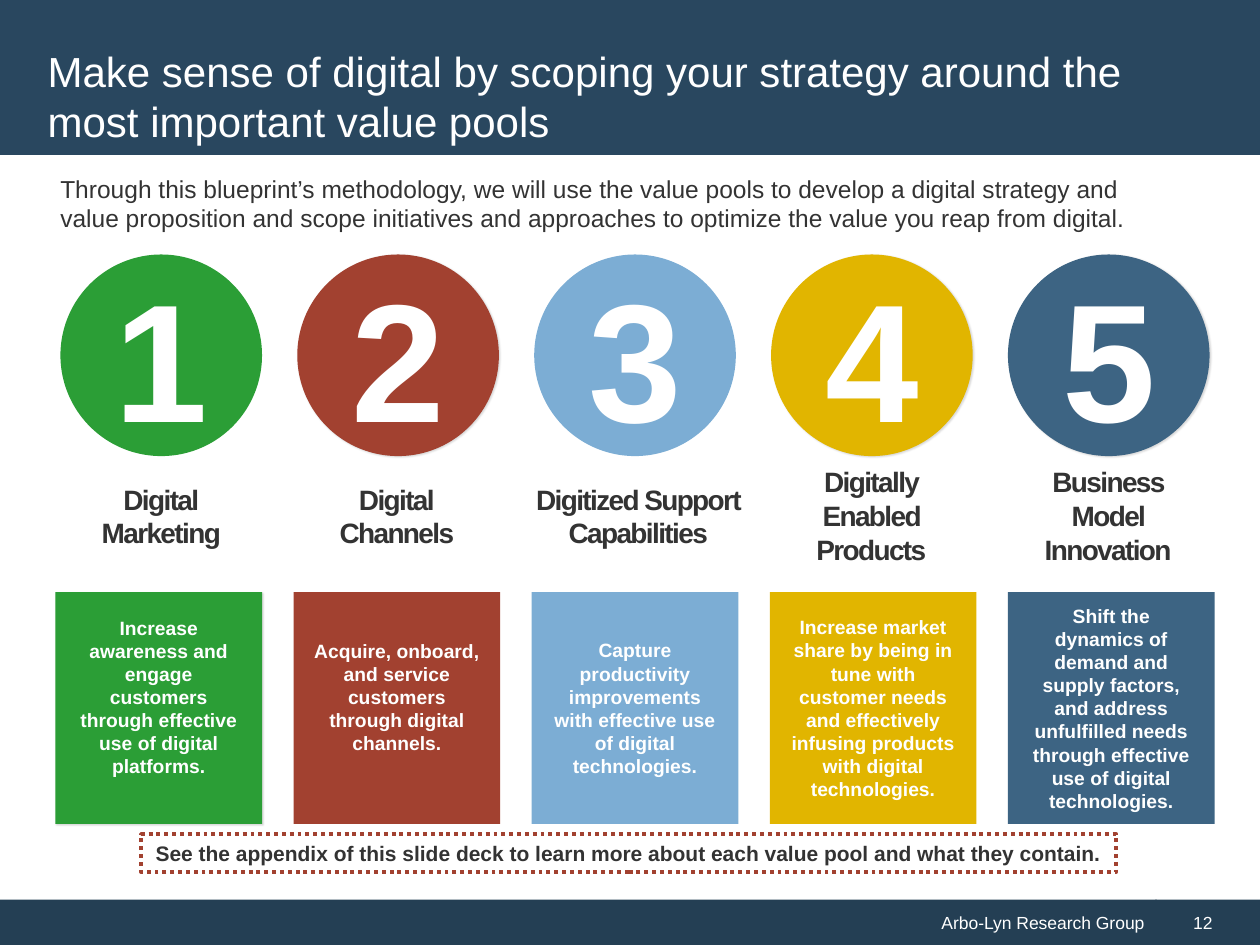
from lxml import etree
from pptx import Presentation
from pptx.dml.color import RGBColor
from pptx.enum.dml import MSO_LINE
from pptx.enum.shapes import MSO_SHAPE
from pptx.enum.text import MSO_ANCHOR, PP_ALIGN
from pptx.oxml.ns import qn
from pptx.util import Pt

PX = 9144
RECT, OVAL = MSO_SHAPE.RECTANGLE, MSO_SHAPE.OVAL
TOP, MIDDLE = MSO_ANCHOR.TOP, MSO_ANCHOR.MIDDLE
LEFT, CENTER, RIGHT = PP_ALIGN.LEFT, PP_ALIGN.CENTER, PP_ALIGN.RIGHT
DOTTED = MSO_LINE.ROUND_DOT
COLORS = {
    "white": "FFFFFF", "text": "333333", "header": "29475F", "footer": "243F54",
    "green": "2B9E36", "red": "A24130", "sky": "7CADD4", "gold": "E1B500",
    "steel": "3D6483",
}
POOLS = [
    {"color": "green", "label": "Digital\nMarketing", "label_box": (67, 378, 122, 64),
     "text": "Increase awareness and engage customers through effective use of "
             "digital platforms.",
     "raise_by": 18, "box_shadow": True},
    {"color": "red", "label": "Digital\nChannels", "label_box": (257, 378, 116, 64),
     "text": "Acquire, onboard, and service customers through digital channels.",
     "raise_by": 18, "circle_shadow": True},
    {"color": "sky", "label": "Digitized Support Capabilities",
     "label_box": (414, 378, 185, 64),
     "text": "Capture productivity improvements with effective use of digital "
             "technologies."},
    {"color": "gold", "label": "Digitally Enabled Products",
     "label_box": (607, 364, 169, 91),
     "text": "Increase market share by being in tune with customer needs and "
             "effectively infusing products with digital technologies.",
     "circle_shadow": True},
    {"color": "steel", "label": "Business Model Innovation",
     "label_box": (798, 364, 163, 91),
     "text": "Shift the dynamics of demand and supply factors, and address "
             "unfulfilled needs through effective use of digital technologies.",
     "circle_shadow": True},
]


def rgb(name):
    return RGBColor.from_string(COLORS[name])


def write(sp, text, size=12, color="white", bold=False, align=CENTER, anchor=MIDDLE,
          insets=(10, 5, 10, 5), spacing=None):
    tf = sp.text_frame
    tf.word_wrap = True
    tf.vertical_anchor = anchor
    tf.margin_left, tf.margin_top, tf.margin_right, tf.margin_bottom = (
        v * PX for v in insets)
    for i, line in enumerate(text.split("\n")):
        p = tf.add_paragraph() if i else tf.paragraphs[0]
        p.alignment = align
        r = p.add_run()
        r.text = line
        r.font.name, r.font.size, r.font.bold = "Arial", Pt(size), bold
        r.font.color.rgb = rgb(color)
        if spacing:
            r._r.get_or_add_rPr().set("spc", str(spacing))


class Deck:
    """Holds the presentation, its style and the current slide."""

    def __init__(self, width, height):
        self.prs = Presentation()
        self.prs.slide_width, self.prs.slide_height = width * PX, height * PX
        self.s = self.prs.slides.add_slide(self.prs.slide_layouts[6])

    def shape(self, kind, box, fill=None, line=None, shadow=False, text="", **fmt):
        sp = self.s.shapes.add_shape(kind, *(v * PX for v in box))
        sp.shadow.inherit = False
        if fill:
            sp.fill.solid()
            sp.fill.fore_color.rgb = rgb(fill)
        else:
            sp.fill.background()
        if line:
            sp.line.color.rgb = rgb(line)
            sp.line.width = Pt(2.25)
            sp.line.dash_style = DOTTED
        else:
            sp.line.fill.background()
        if shadow:
            self.add_shadow(sp)
        if text:
            write(sp, text, **fmt)

    def add_shadow(self, sp):
        effects = sp._element.spPr.find(qn("a:effectLst"))
        outer = etree.SubElement(effects, qn("a:outerShdw"), blurRad="12700",
                                 dist="12700", dir="2700000", algn="tl")
        tint = etree.SubElement(outer, qn("a:srgbClr"), val="000000")
        etree.SubElement(tint, qn("a:alpha"), val="15000")

    def text(self, box, text, **fmt):
        write(self.s.shapes.add_textbox(*(v * PX for v in box)), text, **fmt)


def main():
    deck = Deck(1000, 750)
    deck.shape(RECT, (0, 714, 918, 37), "footer", text="Arbo-Lyn Research Group",
               size=10, align=RIGHT)
    deck.shape(RECT, (917, 714, 83, 37), "footer", text="12", size=10, align=LEFT,
               insets=(30, 5, 10, 5))
    deck.shape(RECT, (0, 0, 1000, 123), "header")
    deck.text((28, 28, 943, 96),
              "Make sense of digital by scoping your strategy around the most "
              "important value pools", size=24, align=LEFT)
    deck.text((38, 133, 888, 57),
              "Through this blueprint’s methodology, we will use the value pools to "
              "develop a digital strategy and value proposition and scope initiatives "
              "and approaches to optimize the value you reap from digital.",
              size=14, color="text", align=LEFT, anchor=TOP)

    for i, pool in enumerate(POOLS):
        deck.shape(OVAL, (48 + 188 * i, 202, 160, 160), pool["color"],
                   shadow=pool.get("circle_shadow", False),
                   text=str(i + 1), size=96, bold=True)
        deck.text(pool["label_box"], pool["label"], size=16, color="text", bold=True,
                  anchor=TOP, spacing=-90)
        deck.shape(RECT, (44 + 189 * i, 470, 164, 184), pool["color"],
                   shadow=pool.get("box_shadow", False), text=pool["text"], size=11,
                   bold=True, insets=(16, 5, 16, 5 + pool.get("raise_by", 0)))

    deck.shape(RECT, (112, 662, 774, 30), line="red",
               text="See the appendix of this slide deck to learn more about each "
                    "value pool and what they contain.",
               color="text", bold=True)
    deck.prs.save("out.pptx")


if __name__ == "__main__":
    main()
